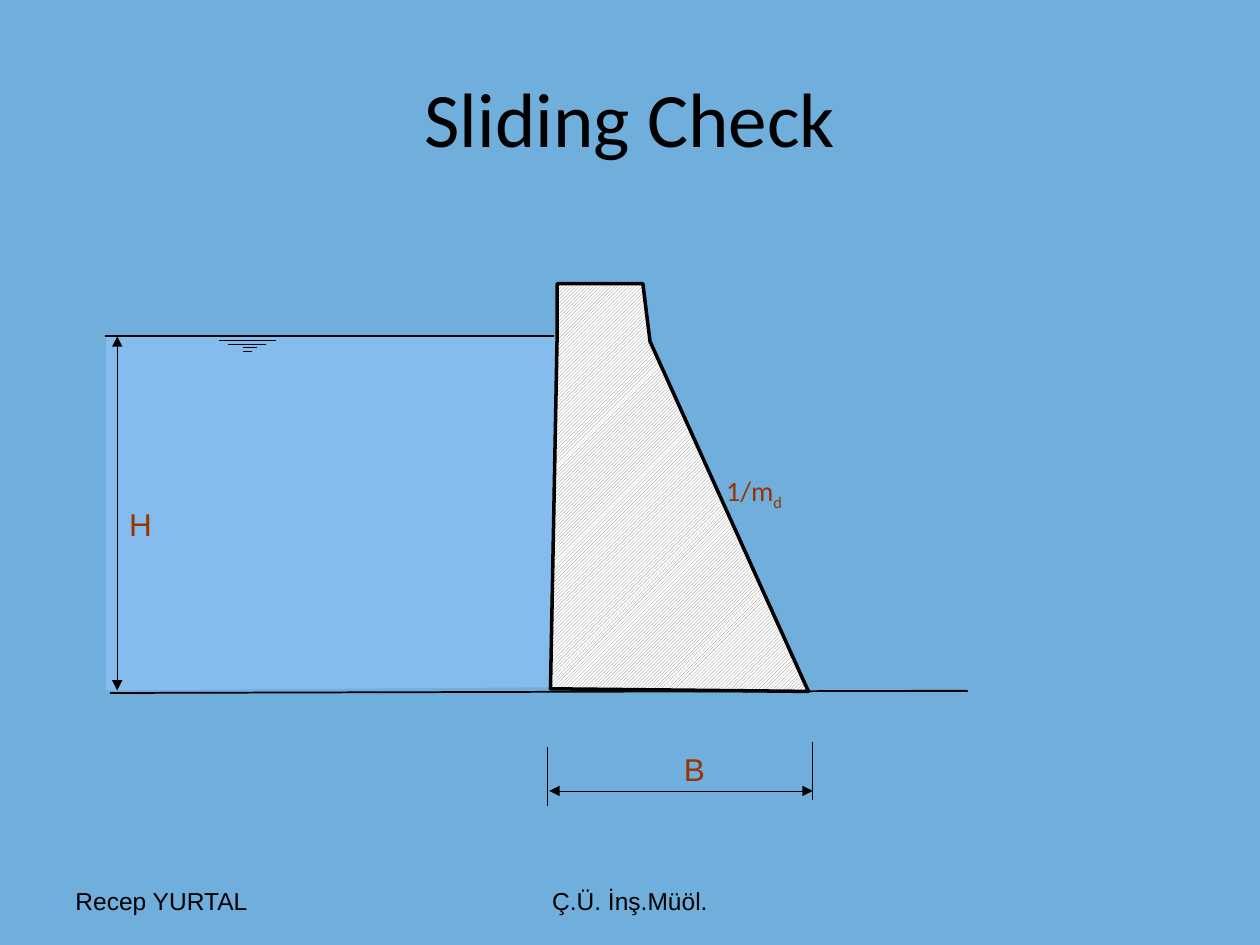
"""Build the sliding check slide: a dam section with reservoir and dimensions."""
from dataclasses import dataclass

from lxml.etree import SubElement
from pptx import Presentation
from pptx.dml.color import RGBColor
from pptx.enum.dml import MSO_PATTERN
from pptx.enum.shapes import MSO_CONNECTOR
from pptx.enum.text import MSO_ANCHOR, PP_ALIGN
from pptx.oxml.ns import qn
from pptx.util import Pt

BLACK = RGBColor(0x00, 0x00, 0x00)
WHITE = RGBColor(0xFF, 0xFF, 0xFF)
GRAY = RGBColor(0x80, 0x80, 0x80)
RUST = RGBColor(0x99, 0x33, 0x00)
SKY = RGBColor(0x70, 0xAE, 0xDC)
WATER = RGBColor(0x99, 0xCC, 0xFF)
THIN = 0.25


@dataclass(frozen=True)
class Line:
    x1: float
    y1: float
    x2: float
    y2: float
    width: float = THIN
    arrows: bool = False


@dataclass(frozen=True)
class Label:
    text: str
    left: float
    top: float
    width: float
    height: float
    size: float
    font: str = "Arial"
    color: RGBColor = RUST
    align: PP_ALIGN = PP_ALIGN.CENTER
    anchor: MSO_ANCHOR = MSO_ANCHOR.TOP
    inset_x: float = 7.2
    inset_y: float = 3.6
    subscript: str = ""


WATER_OUTLINE = [(60.5, 192.2), (318.2, 192.2), (369.4, 392.4), (60.5, 394.6)]
DAM_OUTLINE = [(314.6, 393.6), (318.4, 191.5), (318.4, 162.1), (367.4, 162.1),
               (371.5, 195.1), (462, 395.1)]

RIPPLES = [(125.3, 157.7), (130.3, 151.9), (139, 146.9), (139, 144)]
LINES = [Line(x1, 194.2 + 2.25 * i, x2, 194.2 + 2.25 * i)
         for i, (x1, x2) in enumerate(RIPPLES)] + [
    Line(316.8, 192.2, 59.8, 192.2, 1),
    Line(465.8, 395.1, 553, 395.1, 1),
    Line(553, 394.7, 62.8, 396, 1),
    Line(67, 192.2, 67, 394.6, arrows=True),
    Line(312.5, 427, 312.5, 460.8),
    Line(464.4, 424, 464.4, 457.2),
    Line(313.9, 452, 464.4, 452, arrows=True),
]

LABELS = [
    Label("Recep YURTAL", 36, 500.4, 168, 28.8, 14, color=BLACK,
          align=PP_ALIGN.LEFT, anchor=MSO_ANCHOR.MIDDLE),
    Label("Ç.Ü. İnş.Müöl.", 246, 500.4, 228, 28.8, 14, color=BLACK,
          anchor=MSO_ANCHOR.MIDDLE),
    Label("H", 67.7, 288, 25.2, 20.9, 18, inset_x=0.72, inset_y=0.72),
    Label("1/m", 399.6, 270, 62.6, 21.6, 16, "Calibri", inset_x=0.72,
          inset_y=0.72, subscript="d"),
    Label("B", 355, 424.8, 83.5, 36.7, 18),
    Label("Sliding Check", 36, 21.6, 648, 90, 44, "Calibri", BLACK,
          anchor=MSO_ANCHOR.MIDDLE),
]


def add_outline(s, points: list):
    """Add a closed shape through the given points."""
    corners = [(Pt(x), Pt(y)) for x, y in points]
    builder = s.shapes.build_freeform(*corners[0], scale=1.0)
    builder.add_line_segments(corners[1:], close=True)
    sp = builder.convert_to_shape()
    sp.shadow.inherit = False
    return sp


def add_water(s) -> None:
    """Add the half-transparent reservoir."""
    sp = add_outline(s, WATER_OUTLINE)
    sp.fill.solid()
    sp.fill.fore_color.rgb = WATER
    color = sp.fill._xPr.find(qn("a:solidFill"))[0]
    SubElement(color, qn("a:alpha"), val="50000")
    sp.line.fill.background()


def add_dam(s) -> None:
    """Add the hatched dam section."""
    sp = add_outline(s, DAM_OUTLINE)
    sp.fill.patterned()
    sp.fill.pattern = MSO_PATTERN.DARK_UPWARD_DIAGONAL
    sp.fill.fore_color.rgb = GRAY
    sp.fill.back_color.rgb = WHITE
    sp.line.color.rgb = BLACK
    sp.line.width = Pt(2)


def add_line(s, line: Line) -> None:
    """Add a straight line, with arrowheads at both ends if asked."""
    ends = (Pt(v) for v in (line.x1, line.y1, line.x2, line.y2))
    sp = s.shapes.add_connector(MSO_CONNECTOR.STRAIGHT, *ends)
    sp.line.color.rgb = BLACK
    sp.line.width = Pt(line.width)
    if line.arrows:
        ln = sp.line._get_or_add_ln()
        for tag in ("a:headEnd", "a:tailEnd"):
            SubElement(ln, qn(tag), type="triangle")
    SubElement(sp._element.spPr, qn("a:effectLst"))


def add_label(s, label: Label) -> None:
    """Add a text box, with a subscript after its text if given."""
    box = (Pt(v) for v in (label.left, label.top, label.width, label.height))
    tf = s.shapes.add_textbox(*box).text_frame
    tf.word_wrap = True
    tf.vertical_anchor = label.anchor
    tf.margin_left = tf.margin_right = Pt(label.inset_x)
    tf.margin_top = tf.margin_bottom = Pt(label.inset_y)
    tf.text = label.text
    p = tf.paragraphs[0]
    p.alignment = label.align
    if label.subscript:
        r = p.add_run()
        r.text = label.subscript
        r.font._element.set("baseline", "-25000")
    for r in p.runs:
        r.font.name = label.font
        r.font.size = Pt(label.size)
        r.font.color.rgb = label.color


def main() -> None:
    """Build and save the slide."""
    prs = Presentation()
    prs.slide_width, prs.slide_height = Pt(720), Pt(540)
    s = prs.slides.add_slide(prs.slide_layouts[6])
    s.background.fill.solid()
    s.background.fill.fore_color.rgb = SKY
    add_water(s)
    for line in LINES:
        add_line(s, line)
    add_dam(s)
    for label in LABELS:
        add_label(s, label)
    prs.save("out.pptx")


if __name__ == "__main__":
    main()
